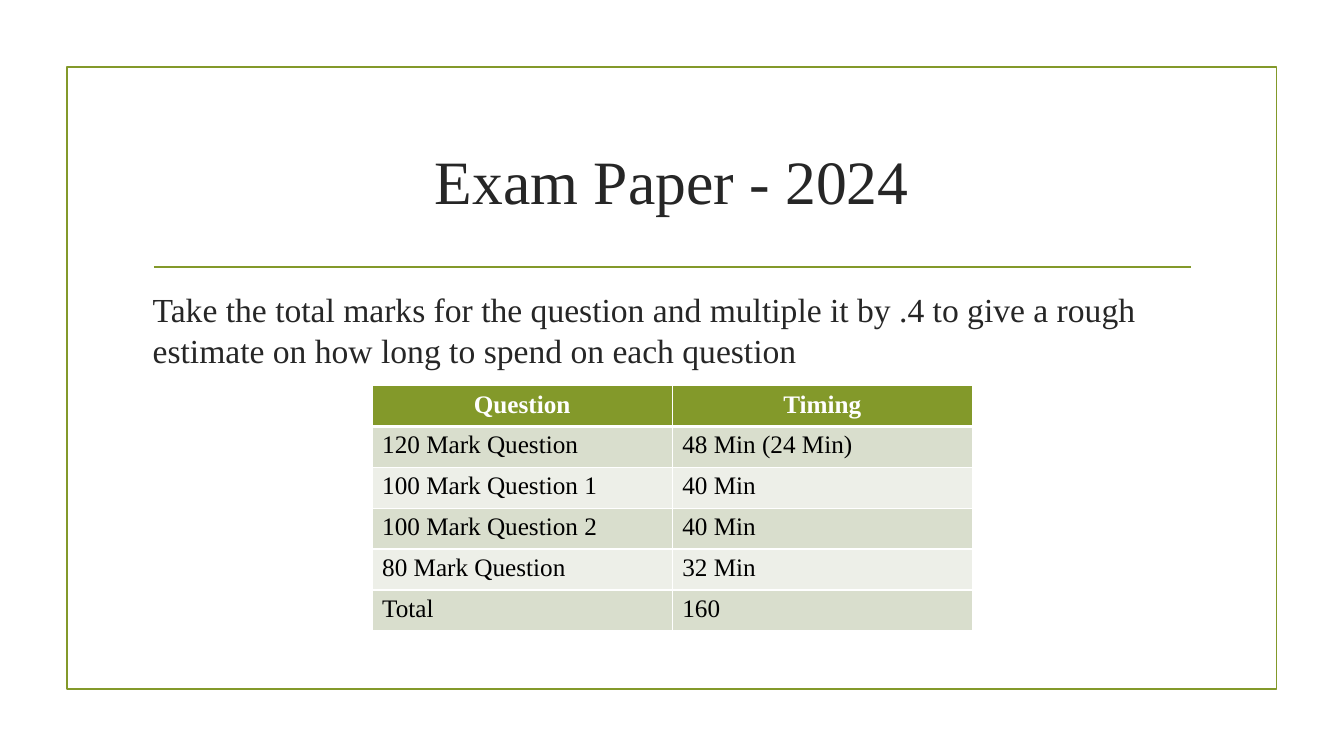
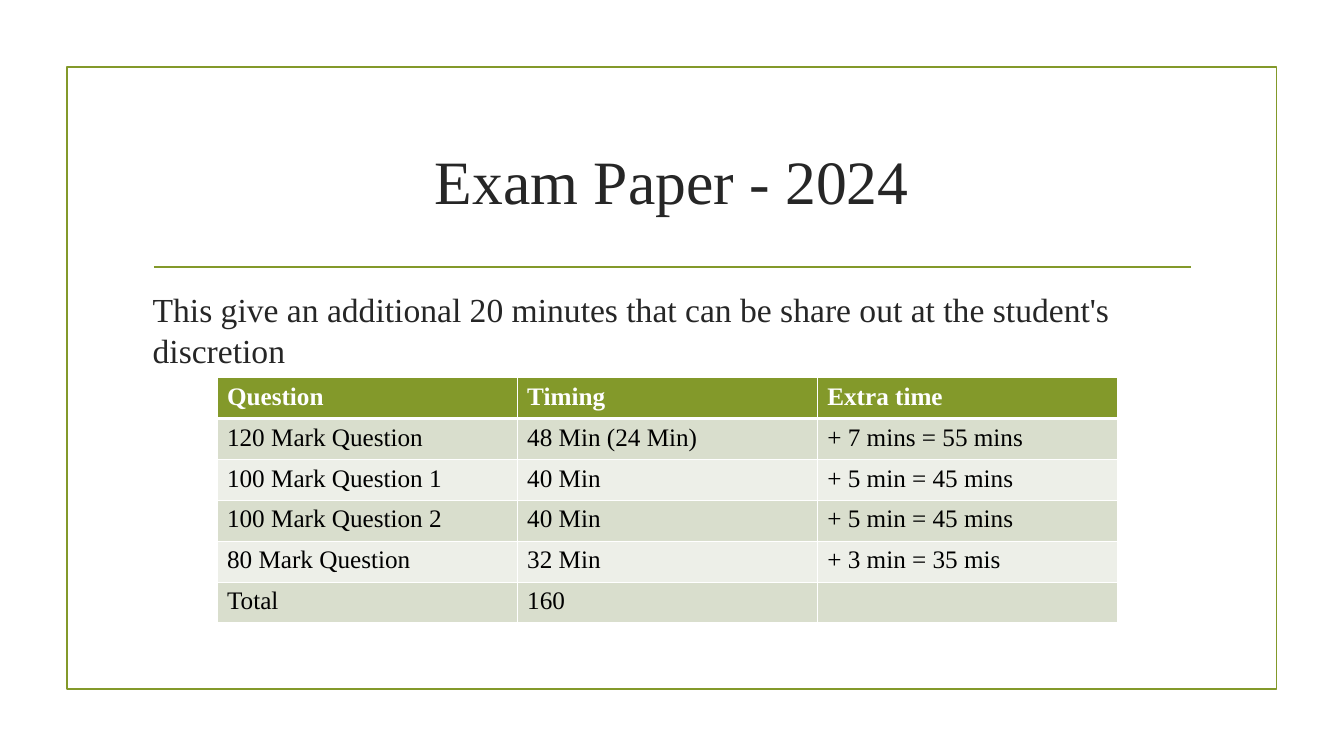
from lxml.etree import SubElement
from pptx import Presentation
from pptx.dml.color import RGBColor
from pptx.enum.shapes import MSO_CONNECTOR, MSO_SHAPE
from pptx.enum.text import MSO_ANCHOR, PP_ALIGN
from pptx.oxml import parse_xml
from pptx.oxml.ns import nsdecls, qn
from pptx.util import Pt

GREEN, INK, BLACK, WHITE = "83992A", "262626", "000000", "FFFFFF"
BANDS = ["D9DECD", "EDEFE8"]
FONT = "Times New Roman"
COL_W, ROW_H = 214.4, 29.2
TITLE = "Exam Paper - 2024"

# Per slide: body text, table left and top, header alignment, rows
SLIDES = [
    ("Take the total marks for the question and multiple it by .4 to give a "
     "rough estimate on how long to spend on each question",
     265.8, 275.4, PP_ALIGN.CENTER,
     [["Question", "Timing"],
      ["120 Mark Question", "48 Min (24 Min)"],
      ["100 Mark Question 1", "40 Min"],
      ["100 Mark Question 2", "40 Min"],
      ["80 Mark Question", "32 Min"],
      ["Total", "160"]]),
    ("This give an additional 20 minutes that can be share out at the "
     "student's discretion",
     155, 269.8, PP_ALIGN.LEFT,
     [["Question", "Timing", "Extra time"],
      ["120 Mark Question", "48 Min (24 Min)", "+ 7 mins = 55 mins"],
      ["100 Mark Question 1", "40 Min", "+ 5 min = 45 mins"],
      ["100 Mark Question 2", "40 Min", "+ 5 min = 45 mins"],
      ["80 Mark Question", "32 Min", "+ 3 min = 35 mis"],
      ["Total", "160", ""]]),
]


def rgb(value):
    return RGBColor.from_string(value)


def write(tf, text, size, color, align=PP_ALIGN.LEFT, bold=False):
    tf.word_wrap = True
    p = tf.paragraphs[0]
    p.text = text
    p.alignment = align
    for r in p.runs:
        r.font.name = FONT
        r.font.size = Pt(size)
        r.font.bold = bold
        r.font.color.rgb = rgb(color)


prs = Presentation()
prs.slide_width, prs.slide_height = Pt(960), Pt(540)

for body, left, top, header_align, rows in SLIDES:
    s = prs.slides.add_slide(prs.slide_layouts[6])

    # Frame
    sp = s.shapes.add_shape(MSO_SHAPE.RECTANGLE, Pt(47.8), Pt(48), Pt(864), Pt(444))
    sp.shadow.inherit = False
    sp.fill.background()
    sp.line.color.rgb = rgb(GREEN)
    sp.line.width = Pt(1.25)

    # Rule under the title
    rule = s.shapes.add_connector(
        MSO_CONNECTOR.STRAIGHT, Pt(110), Pt(190.8), Pt(850.5), Pt(190.8))
    rule.line.color.rgb = rgb(GREEN)
    rule.line.width = Pt(1.25)
    SubElement(rule._element.spPr, qn("a:effectLst"))

    # Title and body text
    tf = s.shapes.add_textbox(Pt(102), Pt(77), Pt(756), Pt(103)).text_frame
    tf.vertical_anchor = MSO_ANCHOR.MIDDLE
    write(tf, TITLE, 44, INK, PP_ALIGN.CENTER)
    tf = s.shapes.add_textbox(Pt(102), Pt(203), Pt(756), Pt(260)).text_frame
    write(tf, body, 24, INK)

    # Table
    n_rows, n_cols = len(rows), len(rows[0])
    table = s.shapes.add_table(n_rows, n_cols, Pt(left), Pt(top),
                               Pt(COL_W * n_cols), Pt(ROW_H * n_rows)).table
    for col in table.columns:
        col.width = Pt(COL_W)
    for i, row in enumerate(rows):
        table.rows[i].height = Pt(ROW_H)
        header = i == 0
        for j, text in enumerate(row):
            cell = table.cell(i, j)
            write(cell.text_frame, text, 18, WHITE if header else BLACK,
                  header_align if header else PP_ALIGN.LEFT, header)
            cell.fill.solid()
            cell.fill.fore_color.rgb = rgb(GREEN if header else BANDS[(i - 1) % 2])

            # White cell borders, thicker under the header
            widths = {"lnL": 1, "lnR": 1, "lnT": 3 if i == 1 else 1,
                      "lnB": 3 if header else 1}
            tcPr = cell._tc.get_or_add_tcPr()
            for k, (tag, width) in enumerate(widths.items()):
                tcPr.insert(k, parse_xml(
                    f'<a:{tag} {nsdecls("a")} w="{Pt(width)}"><a:solidFill>'
                    f'<a:srgbClr val="{WHITE}"/></a:solidFill></a:{tag}>'))

prs.save("out.pptx")
